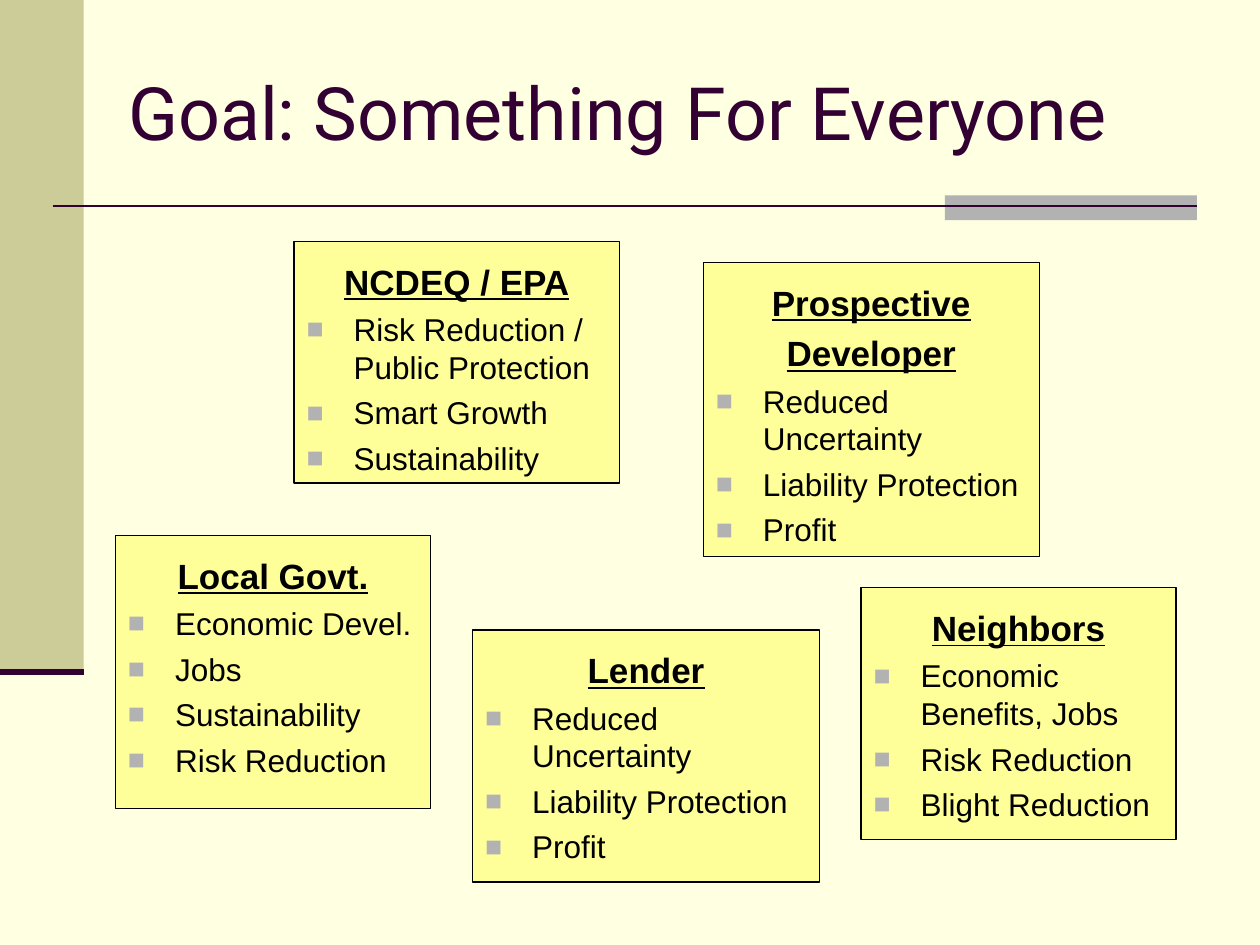
from lxml.etree import SubElement
from pptx import Presentation
from pptx.dml.color import RGBColor
from pptx.enum.shapes import MSO_CONNECTOR as Connector, MSO_SHAPE as Shape
from pptx.enum.text import MSO_ANCHOR as Anchor, PP_ALIGN as Align
from pptx.oxml.ns import qn
from pptx.util import Cm, Pt

CREAM = RGBColor(0xFF, 0xFF, 0xE1)
KHAKI = RGBColor(0xCC, 0xCC, 0x99)
GRAY = RGBColor(0xB2, 0xB2, 0xB2)
PLUM = RGBColor(0x33, 0x00, 0x33)
YELLOW = RGBColor(0xFF, 0xFF, 0x99)
BLACK = RGBColor(0x00, 0x00, 0x00)

HEADING = {"name": "Arial", "size": Pt(20), "bold": True, "underline": True}
ITEM = {"name": "Arial", "size": Pt(18), "bold": False, "underline": False}
TITLE = {"name": "Roboto", "size": Pt(42), "bold": False}
BOX_FRAME = {
    "word_wrap": True, "vertical_anchor": Anchor.TOP,
    "margin_left": Cm(0.25), "margin_right": Cm(0.25),
    "margin_top": Cm(0.38), "margin_bottom": Cm(0.13),
}
INDENT = Cm(0.95)


def add_text(para, text, format_values, color):
    span = para.add_run()
    span.text = text
    for name, value in format_values.items():
        setattr(span.font, name, value)
    span.font.color.rgb = color


def add_panel(page, place, color):
    panel = page.shapes.add_shape(Shape.RECTANGLE, *[Cm(length) for length in place])
    panel.shadow.inherit = False
    panel.fill.solid()
    panel.fill.fore_color.rgb = color
    panel.line.fill.background()
    return panel


deck = Presentation()
deck.slide_width, deck.slide_height = Cm(25.4), Cm(19.05)
page = deck.slides.add_slide(deck.slide_layouts[5])
page.background.fill.solid()
page.background.fill.fore_color.rgb = CREAM

add_panel(page, (0, 0, 1.69, 13.55), KHAKI)
add_panel(page, (19.05, 3.94, 5.08, 0.5), GRAY)

for left, right, height, width in [(1.06, 24.13, 4.15, 1.5), (0, 1.69, 13.55, 3.5)]:
    rule = page.shapes.add_connector(
        Connector.STRAIGHT, Cm(left), Cm(height), Cm(right), Cm(height))
    rule.line.color.rgb = PLUM
    rule.line.width = Pt(width)
    SubElement(rule.element.spPr, qn("a:effectLst"))

title = page.shapes.title
title.left, title.top, title.width, title.height = Cm(2.33), Cm(0.64), Cm(23.5), Cm(3.18)
title.text_frame.vertical_anchor = Anchor.MIDDLE
title.text_frame.paragraphs[0].alignment = Align.LEFT
add_text(title.text_frame.paragraphs[0], "Goal: Something For Everyone", TITLE, PLUM)

groups = [
    ((2.33, 10.8, 6.35, 5.5), ["Local Govt."],
     ["Economic Devel.", "Jobs", "Sustainability", "Risk Reduction"]),
    ((14.18, 5.29, 6.77, 5.93), ["Prospective", "Developer"],
     ["Reduced Uncertainty", "Liability Protection", "Profit"]),
    ((9.53, 12.7, 6.99, 5.08), ["Lender"],
     ["Reduced Uncertainty", "Liability Protection", "Profit"]),
    ((5.93, 4.87, 6.56, 4.87), ["NCDEQ / EPA"],
     ["Risk Reduction / Public Protection", "Smart Growth", "Sustainability"]),
    ((17.36, 11.85, 6.35, 5.08), ["Neighbors"],
     ["Economic Benefits, Jobs", "Risk Reduction", "Blight Reduction"]),
]

for place, headings, items in groups:
    box = add_panel(page, place, YELLOW)
    box.line.color.rgb = BLACK
    box.line.width = Pt(0.75)
    frame = box.text_frame
    for name, value in BOX_FRAME.items():
        setattr(frame, name, value)
    for index, text in enumerate(headings + items):
        is_heading = index < len(headings)
        para = frame.add_paragraph() if index else frame.paragraphs[0]
        para.alignment = Align.CENTER if is_heading else Align.LEFT
        para.space_before = Pt(5) if is_heading else Pt(4.4)
        add_text(para, text, HEADING if is_heading else ITEM, BLACK)
        properties = para._p.get_or_add_pPr()
        properties.set("marL", str(INDENT))
        properties.set("indent", str(-INDENT))
        if not is_heading:
            bullet_color = SubElement(properties, qn("a:buClr"))
            SubElement(bullet_color, qn("a:srgbClr"), val=str(GRAY))
            SubElement(properties, qn("a:buSzPct"), val="90000")
            SubElement(properties, qn("a:buFont"), typeface="Arial")
            SubElement(properties, qn("a:buChar"), char="■")

deck.save("out.pptx")
